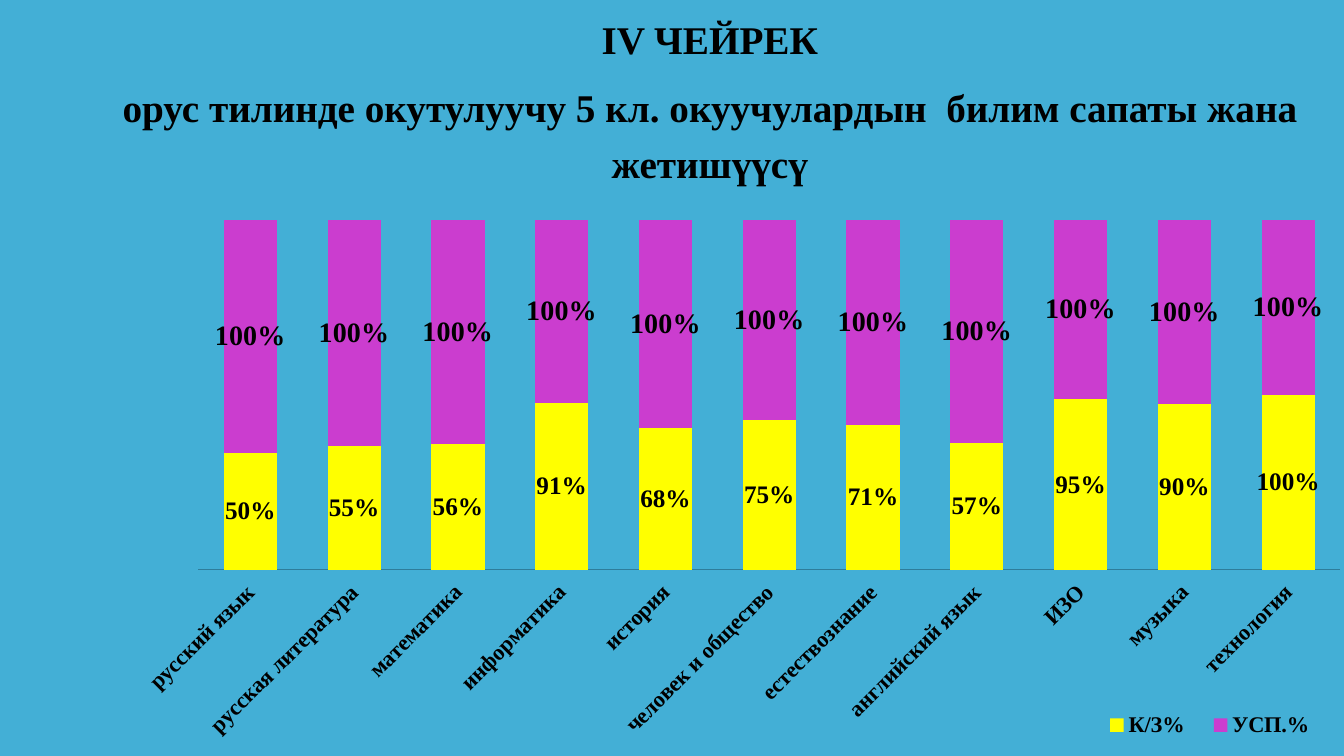
from pptx import Presentation
from pptx.chart.data import CategoryChartData
from pptx.dml.color import RGBColor
from pptx.enum.chart import XL_CHART_TYPE, XL_LEGEND_POSITION, XL_TICK_LABEL_POSITION, XL_TICK_MARK
from pptx.enum.text import MSO_ANCHOR, MSO_AUTO_SIZE, PP_ALIGN
from pptx.oxml import parse_xml
from pptx.oxml.ns import nsdecls, qn
from pptx.util import Inches, Pt

STACKED_100 = XL_CHART_TYPE.COLUMN_STACKED_100
LEGEND_TOP = XL_LEGEND_POSITION.TOP
LABELS_LOW = XL_TICK_LABEL_POSITION.LOW
NO_TICKS = XL_TICK_MARK.NONE
TOP = MSO_ANCHOR.TOP
GROW = MSO_AUTO_SIZE.SHAPE_TO_FIT_TEXT
CENTER = PP_ALIGN.CENTER

SKY = RGBColor(0x43, 0xAF, 0xD6)
BLACK = RGBColor(0, 0, 0)
YELLOW = RGBColor(0xFF, 0xFF, 0)
PURPLE = RGBColor(0xCB, 0x3D, 0xCF)
AXIS_BLUE = RGBColor(0x2E, 0x7D, 0x9B)

SERIF = "Times New Roman"
TITLE_LINES = (
    "IV ЧЕЙРЕК",
    "орус тилинде окутулуучу 5 кл. окуучулардын  билим сапаты жана жетишүүсү",
)
QUALITY = {
    "русский язык": 0.5, "русская литература": 0.55, "математика": 0.56,
    "информатика": 0.91, "история": 0.68, "человек и общество": 0.75,
    "естествознание": 0.71, "английский язык": 0.57, "ИЗО": 0.95,
    "музыка": 0.9, "технология": 1,
}
SERIES_STYLES = ((YELLOW, 18), (PURPLE, 20))
TITLE_BOX = (-0.42, 0.01, 13.42, 1.87)
CHART_BOX = (0.65, 2.11, 12.68, 5.38)
PLOT_SHARES = (0.104, 0.013, 0.893, 0.646)
LEGEND_SHARES = (0.8, 0.91, 0.19, 0.07)


def format_font(font, size):
    style = {"name": SERIF, "size": Pt(size), "bold": True}
    for attribute, value in style.items():
        setattr(font, attribute, value)
    font.color.rgb = BLACK


def add_title(slide, box):
    title = slide.shapes.title
    title.left, title.top, title.width, title.height = map(Inches, box)
    frame = title.text_frame
    frame.text = "\n".join(TITLE_LINES)
    for attribute, value in {"word_wrap": True, "vertical_anchor": TOP, "auto_size": GROW}.items():
        setattr(frame, attribute, value)
    for line in frame.paragraphs:
        for attribute, value in {"alignment": CENTER, "line_spacing": 1.2, "space_after": Pt(8)}.items():
            setattr(line, attribute, value)
        line_format = line._p.get_or_add_pPr()
        line_format.set("marL", str(Inches(1.5)))
        line_format.set("indent", "0")
        format_font(line.runs[0].font, 28)


def manual_layout(shares, target=""):
    """Return a chart layout element placed by shares of the chart's size."""
    modes = "".join(f'<c:{side}Mode val="edge"/>' for side in "xy")
    sizes = "".join(f'<c:{key} val="{share}"/>' for key, share in zip("xywh", shares))
    return parse_xml(
        f'<c:layout {nsdecls("c")}><c:manualLayout>{target}{modes}{sizes}</c:manualLayout></c:layout>'
    )


def place_chart_parts(chart):
    plot_area = chart.element.find(".//" + qn("c:plotArea"))
    legend = chart.element.find(".//" + qn("c:legend"))
    for part in (plot_area, legend):
        for old_layout in part.findall(qn("c:layout")):
            part.remove(old_layout)
    plot_area.insert(0, manual_layout(PLOT_SHARES, '<c:layoutTarget val="inner"/>'))
    legend.find(qn("c:legendPos")).addnext(manual_layout(LEGEND_SHARES))


def format_axes(chart):
    subjects, percent = chart.category_axis, chart.value_axis
    subjects.major_tick_mark = subjects.minor_tick_mark = NO_TICKS
    subjects.tick_label_position = LABELS_LOW
    subjects.format.line.color.rgb = AXIS_BLUE
    subjects.format.line.width = Pt(0.75)
    format_font(subjects.tick_labels.font, 16)
    label_body = chart.element.find(f'.//{qn("c:catAx")}/{qn("c:txPr")}/{qn("a:bodyPr")}')
    label_body.set("rot", str(-45 * 60000))
    label_body.set("vert", "horz")
    percent.visible = percent.has_major_gridlines = False
    percent.minimum_scale, percent.maximum_scale = 0, 1


def add_results_chart(slide, box):
    results = CategoryChartData(number_format="0%")
    results.categories = list(QUALITY)
    results.add_series("К/З%", QUALITY.values())
    results.add_series("УСП.%", [1] * len(QUALITY))
    chart = slide.shapes.add_chart(STACKED_100, *map(Inches, box), results).chart
    chart.has_title = False
    chart.font.name, chart.font.size = "Calibri", Pt(10)

    columns = chart.plots[0]
    columns.gap_width, columns.overlap = 95, 100
    columns.vary_by_categories = False
    for series, (color, label_size) in zip(columns.series, SERIES_STYLES):
        series.format.fill.solid()
        series.format.fill.fore_color.rgb = color
        labels = series.data_labels
        labels.show_value = True
        labels.number_format, labels.number_format_is_linked = "0%", False
        format_font(labels.font, label_size)

    format_axes(chart)
    chart.has_legend = True
    chart.legend.position = LEGEND_TOP
    chart.legend.include_in_layout = False
    format_font(chart.legend.font, 16)
    place_chart_parts(chart)


def main():
    presentation = Presentation()
    presentation.slide_width, presentation.slide_height = Inches(13.33), Inches(7.5)
    slide = presentation.slides.add_slide(presentation.slide_layouts[5])
    slide.background.fill.solid()
    slide.background.fill.fore_color.rgb = SKY
    add_title(slide, TITLE_BOX)
    add_results_chart(slide, CHART_BOX)
    presentation.save("out.pptx")


if __name__ == "__main__":
    main()
